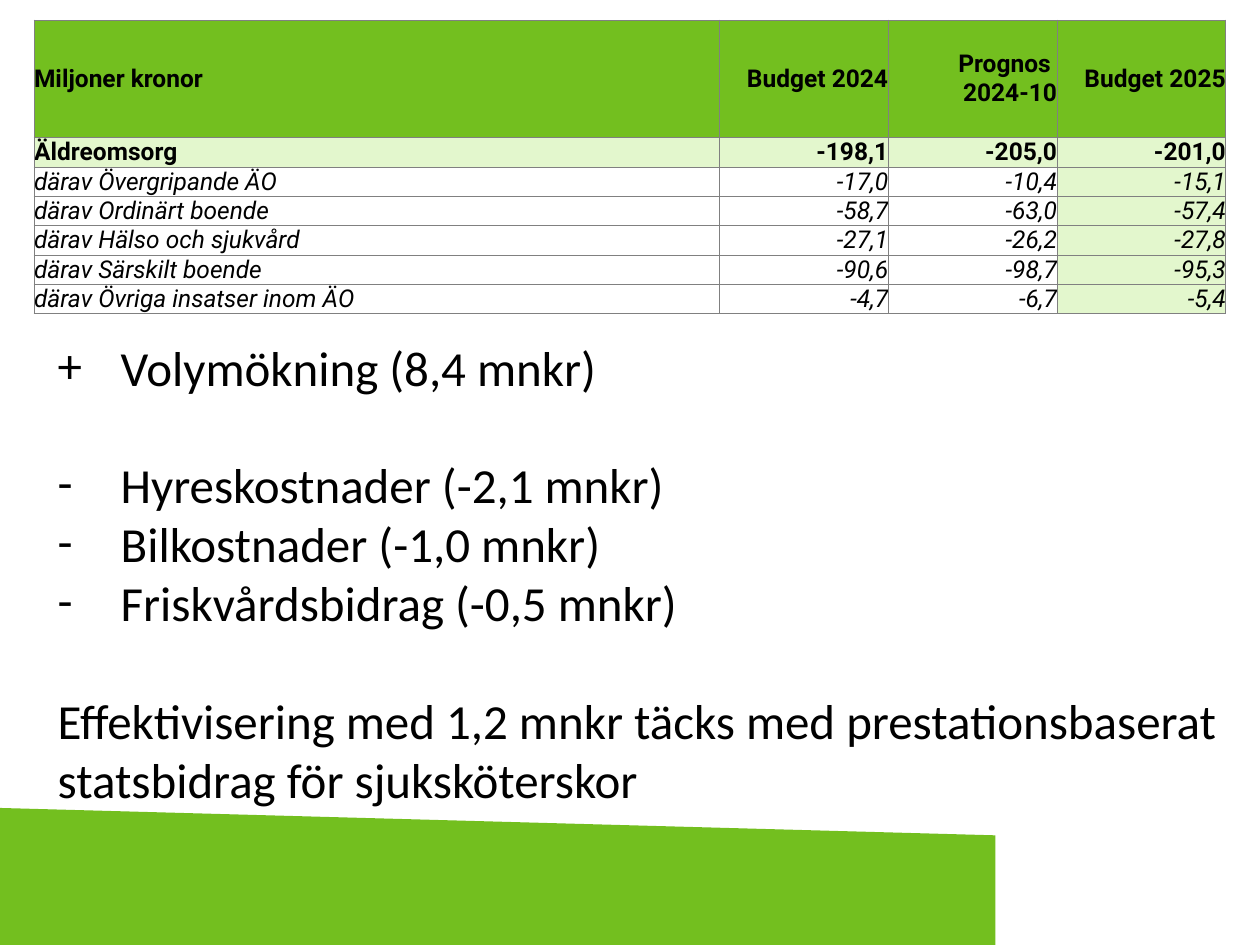
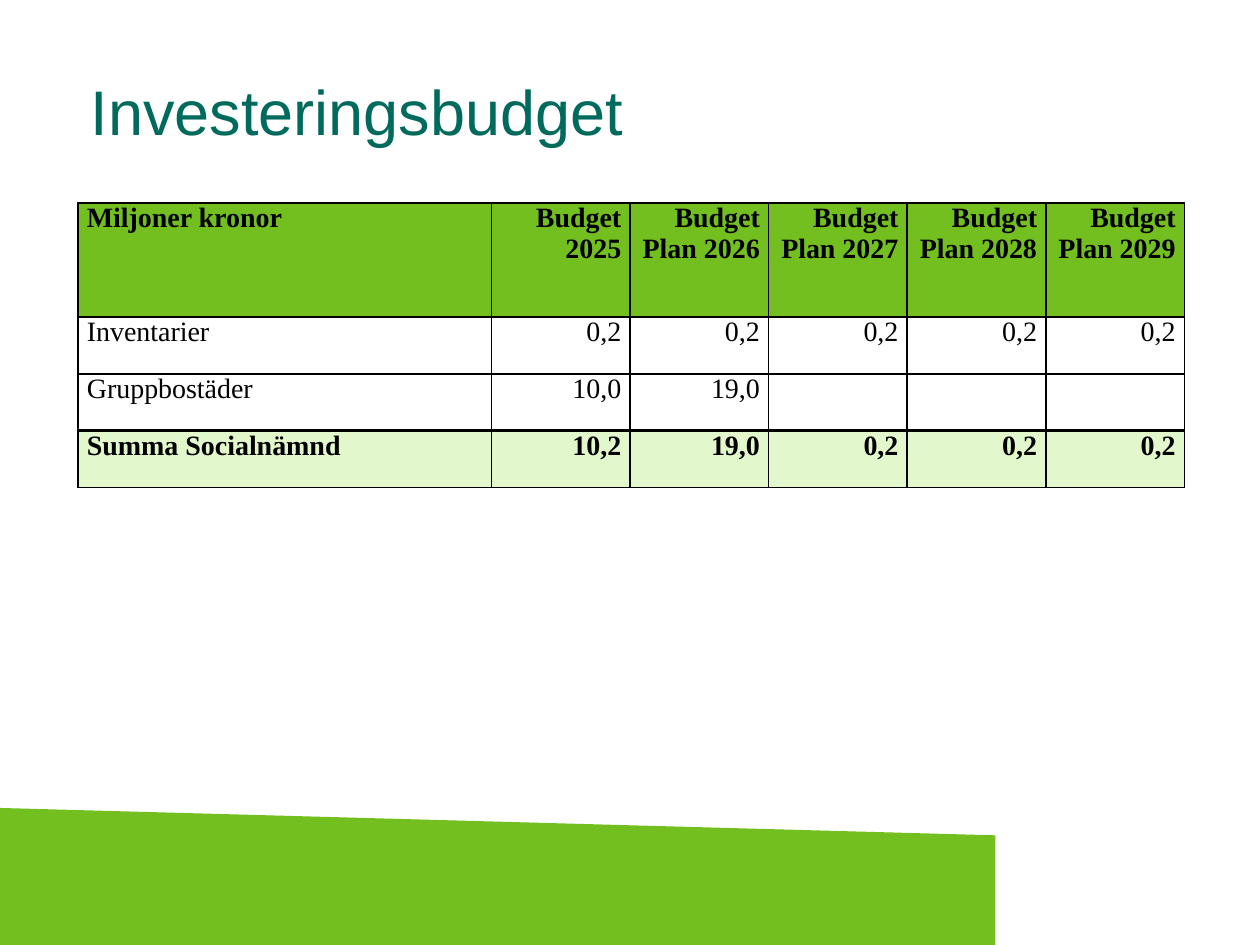
"""Budget slides for elder care and investments."""
from lxml.etree import SubElement
from pptx import Presentation
from pptx.dml.color import RGBColor
from pptx.enum.shapes import MSO_SHAPE
from pptx.enum.text import MSO_ANCHOR, PP_ALIGN
from pptx.oxml.ns import qn
from pptx.util import Inches, Pt

GREEN, PALE, WHITE, BLACK, TEAL, GREY = "73BF1F", "E3F7CD", "FFFFFF", "000000", "006A5C", "808080"
WIDTH, HEIGHT = Inches(10), Inches(7.5)


def colour(value):
    """Turn a hex string into a colour."""
    return RGBColor.from_string(value)


def area(left, top, width, height):
    """Turn percentages of the slide into a position and a size."""
    shares = zip((left, top, width, height), (WIDTH, HEIGHT) * 2)
    return [int(share * side / 100) for share, side in shares]


deck = Presentation()
deck.slide_width, deck.slide_height = WIDTH, HEIGHT
care = deck.slides.add_slide(deck.slide_layouts[6])
investment = deck.slides.add_slide(deck.slide_layouts[5])

for slide in (care, investment):
    band = slide.shapes.add_shape(MSO_SHAPE.FLOWCHART_MANUAL_INPUT, *area(0, 85.5, 79, 14.5))
    band.shadow.inherit = False
    band.fill.solid()
    band.fill.fore_color.rgb = colour(GREEN)
    band.line.fill.background()
    band._element.spPr.find(qn("a:xfrm")).set("flipH", "1")

care_budget = {
    "slide": care, "corner": (2.7, 2.13), "columns": [54.4] + [13.4] * 3,
    "row": 3.11, "header_rows": 4, "anchor": MSO_ANCHOR.MIDDLE, "inset": 0,
    "font": {"name": "Roboto", "size": Pt(14)}, "border": (GREY, 0.5), "heavy_rule": None,
    "bold_rows": (0, 1), "italic_rows": range(2, 7),
    "row_fills": [GREEN, PALE] + [None] * 5, "last_column_fills": [GREEN] + [PALE] * 6,
    "content": [
        ["Miljoner kronor", "Budget 2024", "Prognos \n2024-10", "Budget 2025"],
        ["Äldreomsorg", "-198,1", "-205,0", "-201,0"],
        ["därav Övergripande ÄO", "-17,0", "-10,4", "-15,1"],
        ["därav Ordinärt boende", "-58,7", "-63,0", "-57,4"],
        ["därav Hälso och sjukvård", "-27,1", "-26,2", "-27,8"],
        ["därav Särskilt boende", "-90,6", "-98,7", "-95,3"],
        ["därav Övriga insatser inom ÄO", "-4,7", "-6,7", "-5,4"],
    ],
}
investment_fills = [GREEN, WHITE, WHITE, PALE]
investment_budget = {
    "slide": investment, "corner": (6.2, 21.47), "columns": [32.8] + [11] * 5,
    "row": 6.03, "header_rows": 2, "anchor": MSO_ANCHOR.TOP, "inset": Inches(0.07),
    "font": {"name": "Times New Roman", "size": Pt(16)}, "border": (BLACK, 1), "heavy_rule": 3,
    "bold_rows": (0, 3), "italic_rows": (),
    "row_fills": investment_fills, "last_column_fills": investment_fills,
    "content": [
        ["Miljoner kronor", "Budget 2025"] + [f"Budget Plan {year}" for year in range(2026, 2030)],
        ["Inventarier"] + ["0,2"] * 5,
        ["Gruppbostäder", "10,0", "19,0", "", "", ""],
        ["Summa Socialnämnd", "10,2", "19,0", "0,2", "0,2", "0,2"],
    ],
}

for budget in (care_budget, investment_budget):
    content, columns = budget["content"], budget["columns"]
    heights = [budget["row"] * budget["header_rows"]] + [budget["row"]] * (len(content) - 1)
    place = area(*budget["corner"], sum(columns), sum(heights))
    table = budget["slide"].shapes.add_table(len(content), len(columns), *place).table
    table.first_row = table.horz_banding = False
    for column, share in zip(table.columns, columns):
        column.width = int(WIDTH * share / 100)
    for row, share in zip(table.rows, heights):
        row.height = int(HEIGHT * share / 100)

    border_colour, border_width = budget["border"]
    for r, texts in enumerate(content):
        font = budget["font"] | {"bold": r in budget["bold_rows"], "italic": r in budget["italic_rows"]}
        for c, text in enumerate(texts):
            cell = table.cell(r, c)
            cell.text = text
            layout = {"vertical_anchor": budget["anchor"], "margin_left": budget["inset"],
                      "margin_right": budget["inset"], "margin_top": 0, "margin_bottom": 0}
            for name, value in layout.items():
                setattr(cell, name, value)

            for side, edge in (("L", None), ("R", None), ("T", r), ("B", r + 1)):
                heavy = edge is not None and edge == budget["heavy_rule"]
                width = Pt(2.25 if heavy else border_width)
                rule = SubElement(cell._tc.get_or_add_tcPr(), qn(f"a:ln{side}"), w=str(width))
                SubElement(SubElement(rule, qn("a:solidFill")), qn("a:srgbClr"), val=border_colour)

            last = c == len(columns) - 1
            fill = budget["last_column_fills" if last else "row_fills"][r]
            if fill:
                cell.fill.solid()
                cell.fill.fore_color.rgb = colour(fill)
            else:
                cell.fill.background()

            for paragraph in cell.text_frame.paragraphs:
                paragraph.alignment = PP_ALIGN.RIGHT if c else PP_ALIGN.LEFT
                for run in paragraph.runs:
                    run.font.color.rgb = colour(BLACK)
                    for name, value in font.items():
                        setattr(run.font, name, value)

comments = [
    (area(3.6, 35.07, 92.7, 7.6), [("+", "Volymökning (8,4 mnkr)")]),
    (area(3.6, 47.47, 96.4, 45.33), [
        ("-", "Hyreskostnader (-2,1 mnkr)"),
        ("-", "Bilkostnader (-1,0 mnkr)"),
        ("-", "Friskvårdsbidrag (-0,5 mnkr)"),
        (None, "Effektivisering med 1,2 mnkr täcks med prestationsbaserat "
               "statsbidrag för sjuksköterskor"),
    ]),
]
for place, lines in comments:
    frame = care.shapes.add_textbox(*place).text_frame
    frame.word_wrap = True
    for index, (sign, text) in enumerate(lines):
        paragraph = frame.paragraphs[0] if index == 0 else frame.add_paragraph()
        if sign:
            properties = paragraph._p.get_or_add_pPr()
            properties.set("marL", str(Inches(0.5)))
            properties.set("indent", str(-Inches(0.5)))
            SubElement(properties, qn("a:buFont"), typeface="Calibri")
            SubElement(properties, qn("a:buChar"), char=sign)
        else:
            paragraph.space_before = Pt(34)
        run = paragraph.add_run()
        run.text = text
        run.font.color.rgb = colour(BLACK)
        for name, value in {"name": "Calibri", "size": Pt(28)}.items():
            setattr(run.font, name, value)

title = investment.shapes.title
title.left, title.top, title.width, title.height = area(6.2, 6.13, 75.1, 12)
title.text_frame.text = "Investeringsbudget"
title.text_frame.vertical_anchor = MSO_ANCHOR.MIDDLE
heading = title.text_frame.paragraphs[0]
for name, value in {"alignment": PP_ALIGN.LEFT, "line_spacing": 0.9}.items():
    setattr(heading, name, value)
heading_font = heading.runs[0].font
heading_font.color.rgb = colour(TEAL)
for name, value in {"name": "Arial", "size": Pt(36)}.items():
    setattr(heading_font, name, value)

deck.save("out.pptx")
